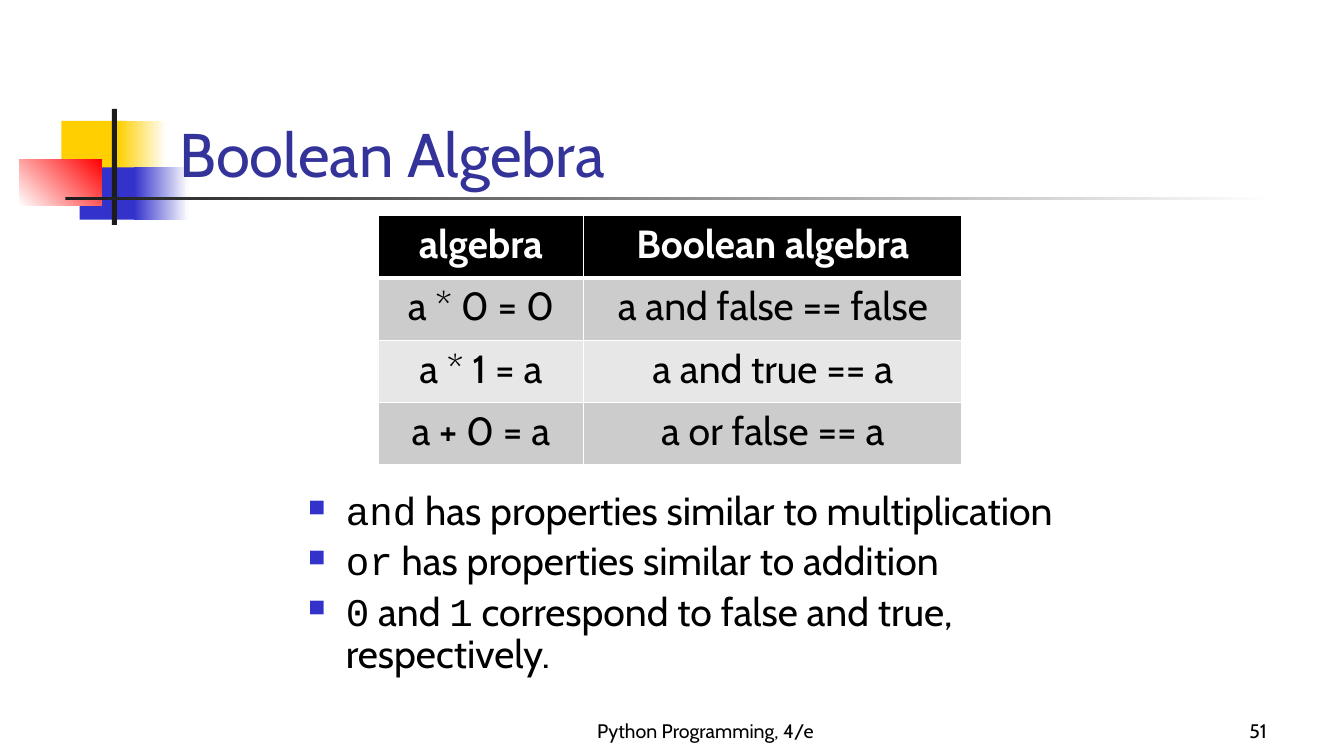
from lxml import etree
from pptx import Presentation
from pptx.dml.color import RGBColor
from pptx.enum.shapes import MSO_SHAPE as Preset
from pptx.enum.text import MSO_ANCHOR as Anchor, PP_ALIGN as Align
from pptx.oxml.ns import qn
from pptx.util import Pt

COLORS = {
    "yellow": "FFCF01", "blue": "3333CC", "red": "FF0000", "ink": "1C1C1C",
    "title": "333399", "black": "000000", "white": "FFFFFF",
    "odd_row": "CCCCCC", "even_row": "E7E7E7",
}
SANS, MONO = "Cabin", "Courier New"

# left, top, width, height, gradient start, gradient end (None is solid), angle
EMBLEM = [
    (43.9, 12.1, 46.1, 37.4, "yellow", None, 0),
    (84.2, 12.1, 34.6, 37.4, "yellow", "white", 0),
    (56.9, 45.3, 44.6, 37.4, "blue", None, 0),
    (95.8, 45.3, 38.9, 37.4, "blue", "white", 0),
    (13.7, 39.5, 59, 33.1, "white", "red", 45),
    (79.9, 3.5, 3.6, 82.8, "ink", None, 0),
    (46.8, 66.1, 864, 2.5, "ink", "white", 0),
]
ALGEBRA_ROWS = [
    ("algebra", "Boolean algebra"),
    ("a * 0 = 0", "a and false == false"),
    ("a * 1 = a", "a and true == a"),
    ("a + 0 = a", "a or false == a"),
]
BULLETS = [
    [("and", MONO), (" has properties similar to multiplication", SANS)],
    [("or", MONO), (" has properties similar to addition", SANS)],
    [("0", MONO), (" and ", SANS), ("1", MONO),
     (" correspond to false and true, respectively.", SANS)],
]


def rgb(name):
    return RGBColor.from_string(COLORS[name])


def style(paragraph, size, color, align=Align.LEFT, bold=False):
    paragraph.alignment = align
    font = paragraph.font
    font.name, font.size, font.bold = SANS, Pt(size), bold
    font.color.rgb = rgb(color)


def add_emblem(slide, left, top):
    """Coloured blocks and crossing bars beside the title."""
    for dx, dy, width, height, start, end, angle in EMBLEM:
        block = slide.shapes.add_shape(
            Preset.RECTANGLE, Pt(left + dx), Pt(top + dy), Pt(width), Pt(height))
        block.shadow.inherit = False
        block.line.fill.background()
        if end is None:
            block.fill.solid()
            block.fill.fore_color.rgb = rgb(start)
        else:
            block.fill.gradient()
            block.fill.gradient_angle = angle
            for stop, color in zip(block.fill.gradient_stops, (start, end)):
                stop.color.rgb = rgb(color)


def add_text_frame(slide, left, top, width, height, anchor):
    box = slide.shapes.add_textbox(Pt(left), Pt(top), Pt(width), Pt(height))
    frame = box.text_frame
    frame.word_wrap = True
    frame.vertical_anchor = anchor
    return frame


def add_label(slide, box, text, size, color, align):
    """One bottom-anchored line of text."""
    paragraph = add_text_frame(slide, *box, Anchor.BOTTOM).paragraphs[0]
    paragraph.text = text
    style(paragraph, size, color, align)


def set_borders(cell, widths):
    properties = cell._tc.get_or_add_tcPr()
    for index, (side, width) in enumerate(widths.items()):
        line = etree.Element(qn(f"a:ln{side}"), w=str(Pt(width)))
        fill = etree.SubElement(line, qn("a:solidFill"))
        etree.SubElement(fill, qn("a:srgbClr"), val=COLORS["white"])
        properties.insert(index, line)


def add_algebra_table(slide, left, top, column_widths, row_height):
    row_count = len(ALGEBRA_ROWS)
    table = slide.shapes.add_table(
        row_count, len(column_widths), Pt(left), Pt(top),
        Pt(sum(column_widths)), Pt(row_height * row_count)).table
    for column, width in zip(table.columns, column_widths):
        column.width = Pt(width)
    for row_index, texts in enumerate(ALGEBRA_ROWS):
        table.rows[row_index].height = Pt(row_height)
        header = row_index == 0
        fill = "black" if header else ("even_row", "odd_row")[row_index % 2]
        borders = {"L": 1, "R": 1, "T": 3 if row_index == 1 else 1,
                   "B": 3 if header else 1}
        for column_index, text in enumerate(texts):
            cell = table.cell(row_index, column_index)
            cell.fill.solid()
            cell.fill.fore_color.rgb = rgb(fill)
            paragraph = cell.text_frame.paragraphs[0]
            paragraph.text = text
            style(paragraph, 28, "white" if header else "black",
                  Align.CENTER, header)
            set_borders(cell, borders)


def add_square_bullet(paragraph, indent):
    properties = paragraph._p.get_or_add_pPr()
    properties.set("marL", str(Pt(indent)))
    properties.set("indent", str(-Pt(indent)))
    bullet_color = etree.Element(qn("a:buClr"))
    etree.SubElement(bullet_color, qn("a:srgbClr"), val=COLORS["blue"])
    bullet_parts = [
        bullet_color,
        etree.Element(qn("a:buSzPct"), val="60000"),
        etree.Element(qn("a:buChar"), char="■"),
    ]
    defaults = properties.find(qn("a:defRPr"))
    for part in bullet_parts:
        defaults.addprevious(part)


def add_bullets(slide, box):
    frame = add_text_frame(slide, *box, Anchor.TOP)
    for index, pieces in enumerate(BULLETS):
        paragraph = frame.add_paragraph() if index else frame.paragraphs[0]
        style(paragraph, 28, "black")
        paragraph.line_spacing = 0.9
        paragraph.space_before = Pt(5.6)
        add_square_bullet(paragraph, 27)
        for text, font_name in pieces:
            run = paragraph.add_run()
            run.text = text
            run.font.name = font_name


def main():
    presentation = Presentation()
    presentation.slide_width, presentation.slide_height = Pt(960), Pt(540)
    slide = presentation.slides.add_slide(presentation.slide_layouts[6])
    add_emblem(slide, 0, 74.3)
    add_label(slide, (352, 498.2, 304, 36), "Python Programming, 4/e", 14,
              "black", Align.CENTER)
    add_label(slide, (712, 498.2, 200, 36), "51", 14, "black", Align.RIGHT)
    add_label(slide, (121, 49, 818, 90), "Boolean Algebra", 44, "title",
              Align.LEFT)
    add_bullets(slide, (213, 347.8, 612, 134.6))
    add_algebra_table(slide, 270, 154, (147, 270), 44.5)
    presentation.save("out.pptx")


if __name__ == "__main__":
    main()
